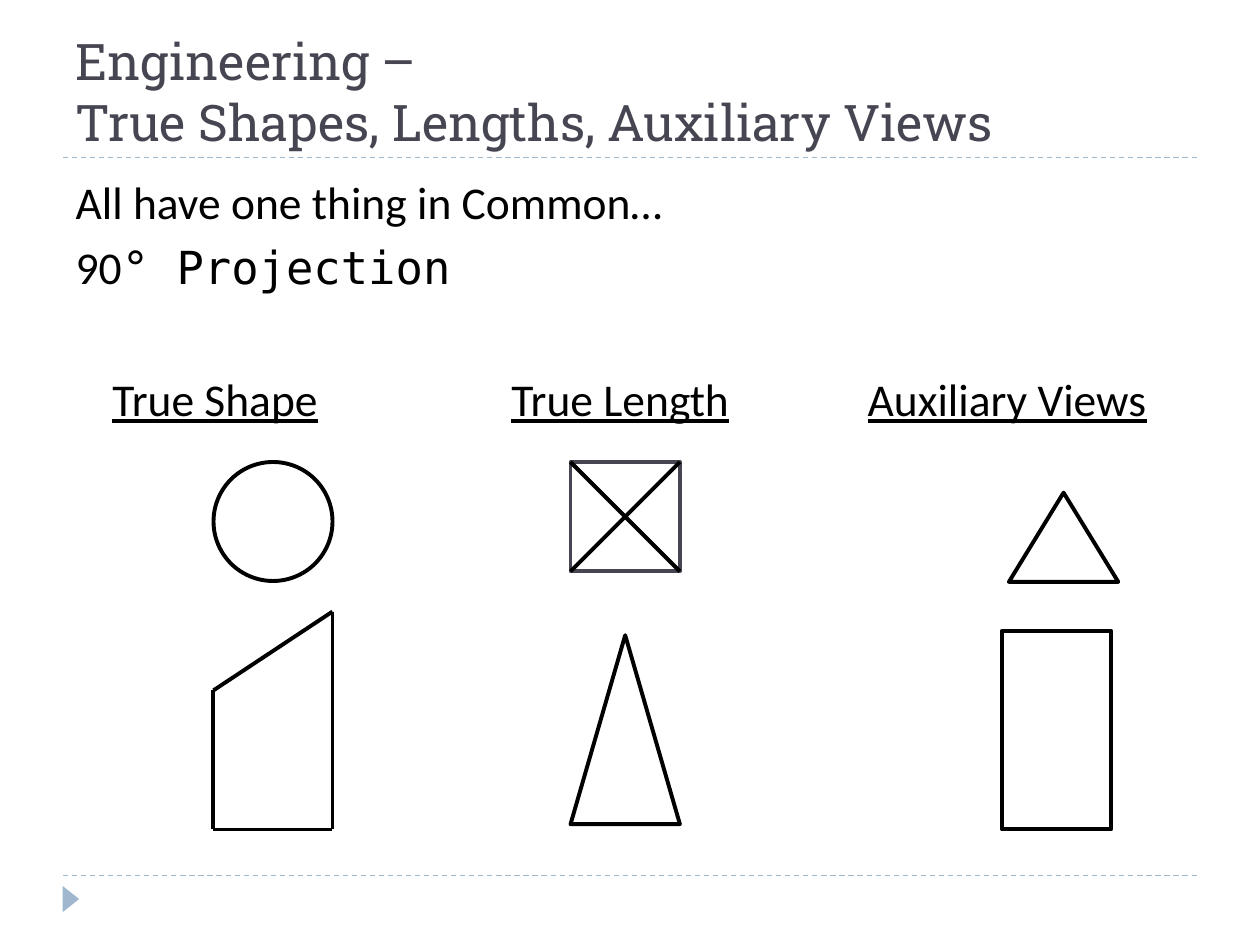
from dataclasses import dataclass

from lxml import etree
from pptx import Presentation
from pptx.dml.color import RGBColor
from pptx.enum import dml, shapes, text
from pptx.oxml import ns
from pptx.util import Pt


@dataclass(frozen=True)
class Theme:
    title_color: RGBColor = RGBColor(0x46, 0x46, 0x53)
    ink: RGBColor = RGBColor(0, 0, 0)
    accent: RGBColor = RGBColor(0x9F, 0xB8, 0xCD)
    title_font: str = "Roboto Slab"
    body_font: str = "Calibri"
    symbol_font: str = "DejaVu Sans Mono"
    title_size: float = 28.8
    body_size: float = 26
    outline: float = 2.25
    rule: float = 0.75


theme = Theme()
presentation = Presentation()
presentation.slide_width, presentation.slide_height = Pt(720), Pt(540)
slide = presentation.slides.add_slide(presentation.slide_layouts[1])


def add_line(start, end, color=theme.ink, width=theme.outline):
    line = slide.shapes.add_connector(
        shapes.MSO_CONNECTOR.STRAIGHT, *[Pt(value) for value in (*start, *end)])
    line.line.color.rgb = color
    line.line.width = Pt(width)
    etree.SubElement(line._element.spPr, ns.qn("a:effectLst"))
    return line


def add_outline(kind, left, top, width, height, color=theme.ink):
    shape = slide.shapes.add_shape(kind, Pt(left), Pt(top), Pt(width), Pt(height))
    shape.shadow.inherit = False
    shape.fill.background()
    shape.line.color.rgb = color
    shape.line.width = Pt(theme.outline)
    return shape


for y in (500.4, 90):
    rule = add_line((36, y), (684, y), theme.accent, theme.rule)
    rule.line.dash_style = dml.MSO_LINE.DASH

marker = add_outline(shapes.MSO_SHAPE.ISOSCELES_TRIANGLE, 33, 509, 15, 9.5)
marker.rotation = 90
marker.fill.solid()
marker.fill.fore_color.rgb = theme.accent
marker.line.fill.background()

title = slide.shapes.title
title.left, title.top, title.width, title.height = Pt(36), Pt(12), Pt(648), Pt(78)
title.text_frame.text = "Engineering –\vTrue Shapes, Lengths, Auxiliary Views"
title.text_frame.auto_size = text.MSO_AUTO_SIZE.NONE
title.text_frame.vertical_anchor = text.MSO_ANCHOR.BOTTOM
paragraph = title.text_frame.paragraphs[0]
paragraph.alignment = text.PP_ALIGN.LEFT
paragraph.line_spacing = 1.0
for run in paragraph.runs:
    run.font.name = theme.title_font
    run.font.size = Pt(theme.title_size)
    run.font.color.rgb = theme.title_color

body = slide.placeholders[1]
body.left, body.top, body.width, body.height = Pt(36), Pt(96), Pt(648), Pt(389)
frame = body.text_frame
frame.auto_size = text.MSO_AUTO_SIZE.NONE
body_lines = (
    [("All have one thing in Common…", theme.body_font)],
    [("90", theme.body_font), ("° Projection", theme.symbol_font)],
)
for index, parts in enumerate(body_lines):
    paragraph = frame.paragraphs[0] if index == 0 else frame.add_paragraph()
    paragraph.alignment = text.PP_ALIGN.LEFT
    paragraph.space_before = Pt(6)
    properties = paragraph._p.get_or_add_pPr()
    properties.set("marL", "0")
    properties.set("indent", "0")
    etree.SubElement(properties, ns.qn("a:buNone"))
    for wording, font_name in parts:
        run = paragraph.add_run()
        run.text = wording
        run.font.name = font_name
        run.font.size = Pt(theme.body_size)
        run.font.color.rgb = theme.ink

heading_width = 200
headings = (("True Shape", 123), ("True Length", 354.5), ("Auxiliary Views", 575.5))
for wording, center in headings:
    heading = slide.shapes.add_textbox(
        Pt(center - heading_width / 2), Pt(208.5), Pt(heading_width), Pt(39))
    heading.text_frame.word_wrap = True
    heading.text_frame.text = wording
    paragraph = heading.text_frame.paragraphs[0]
    paragraph.alignment = text.PP_ALIGN.CENTER
    font = paragraph.runs[0].font
    font.name = theme.body_font
    font.size = Pt(theme.body_size)
    font.color.rgb = theme.ink
    font.underline = True

add_outline(shapes.MSO_SHAPE.OVAL, 122, 264, 68, 68)
corners = [(190, 349.5), (190, 474), (122, 474), (122, 394.5)]
for start, end in zip(corners, corners[1:] + corners[:1]):
    add_line(start, end)

left, top, side = 326, 264, 62.5
add_outline(shapes.MSO_SHAPE.RECTANGLE, left, top, side, side, theme.title_color)
add_line((left, top), (left + side, top + side))
add_line((left, top + side), (left + side, top))
add_outline(shapes.MSO_SHAPE.ISOSCELES_TRIANGLE, left, 363, side, 108)

add_outline(shapes.MSO_SHAPE.ISOSCELES_TRIANGLE, 576.5, 281.5, side, 51)
add_outline(shapes.MSO_SHAPE.RECTANGLE, 572.5, 360.5, side, 113.5)

presentation.save("out.pptx")
